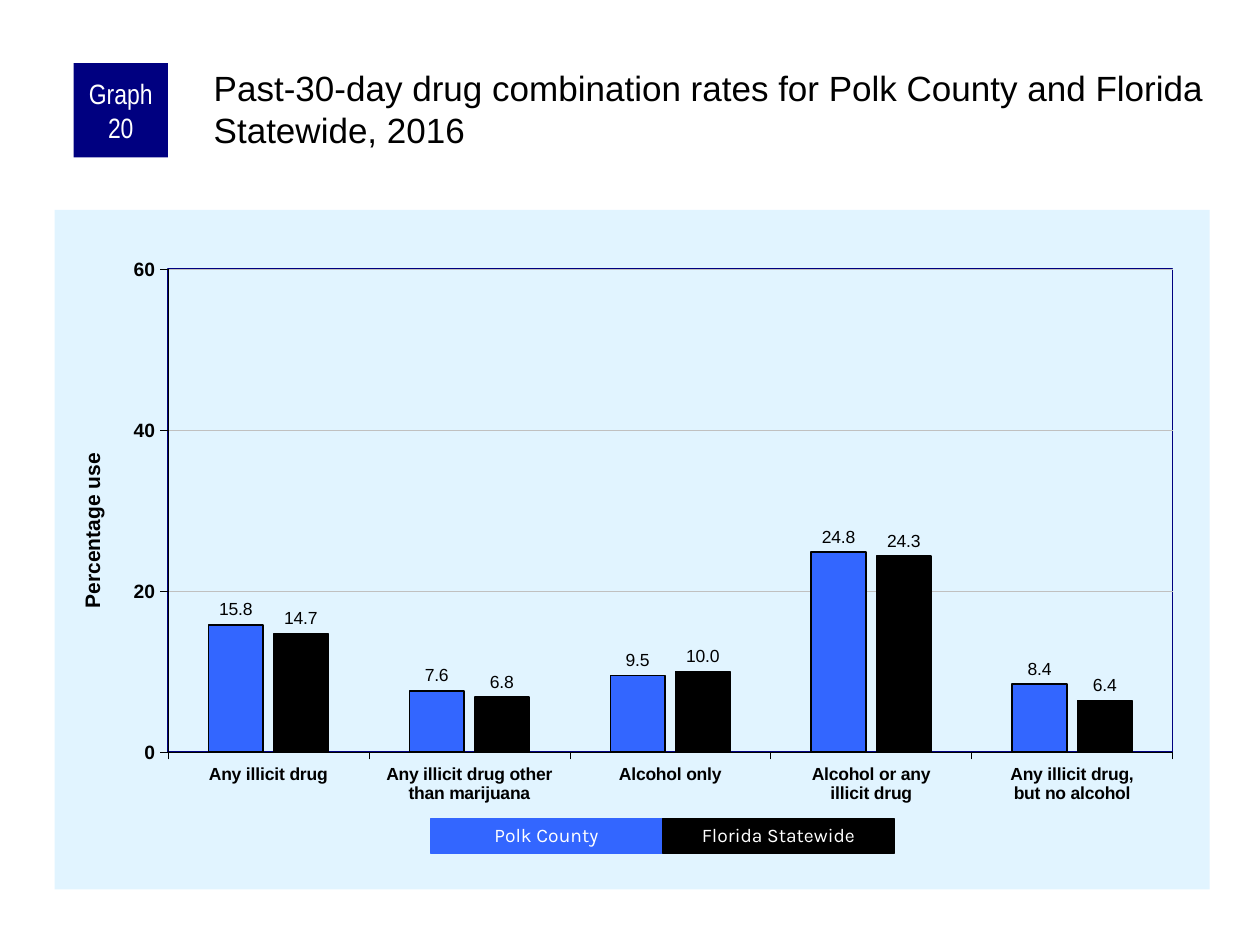
from dataclasses import dataclass

from lxml.etree import SubElement
from pptx import Presentation
from pptx.chart.data import CategoryChartData
from pptx.dml.color import RGBColor
from pptx.enum.chart import XL_CHART_TYPE as ChartType
from pptx.enum.chart import XL_LABEL_POSITION as LabelPosition
from pptx.enum.chart import XL_TICK_MARK as TickMark
from pptx.enum.shapes import MSO_SHAPE as Preset
from pptx.enum.text import MSO_ANCHOR as Anchor
from pptx.enum.text import MSO_AUTO_SIZE as AutoSize
from pptx.enum.text import PP_ALIGN as Align
from pptx.oxml import parse_xml
from pptx.oxml.ns import nsdecls, qn
from pptx.util import Inches, Pt

NAVY = RGBColor(0x00, 0x00, 0x80)
BLUE = RGBColor(0x33, 0x66, 0xFF)
BLACK = RGBColor(0x00, 0x00, 0x00)
WHITE = RGBColor(0xFF, 0xFF, 0xFF)
GREY = RGBColor(0xC0, 0xC0, 0xC0)
PALE_BLUE = RGBColor(0xE1, 0xF4, 0xFF)

COLUMNS, ROWS = 120, 90
SLIDE_WIDTH, SLIDE_HEIGHT = Inches(10), Inches(7.5)

CATEGORIES = (
    "Any illicit drug",
    "Any illicit drug other than marijuana",
    "Alcohol only",
    "Alcohol or any\nillicit drug",
    "Any illicit drug,\nbut no alcohol",
)
PLOT_LAYOUT = {"x": 0.098, "y": 0.087, "w": 0.87, "h": 0.711}


@dataclass(frozen=True)
class Box:
    """A rectangle in columns and rows of the slide grid."""

    column: float
    row: float
    columns: float
    rows: float

    def place(self) -> tuple[int, int, int, int]:
        width, height = SLIDE_WIDTH / COLUMNS, SLIDE_HEIGHT / ROWS
        return (round(self.column * width), round(self.row * height),
                round(self.columns * width), round(self.rows * height))


@dataclass(frozen=True)
class Region:
    name: str
    values: tuple[float, ...]
    color: RGBColor


REGIONS = (
    Region("Polk County", (15.8, 7.6, 9.5, 24.8, 8.4), BLUE),
    Region("Florida Statewide", (14.7, 6.8, 10.0, 24.3, 6.4), BLACK),
)


def set_values(target, values: dict) -> None:
    for name, value in values.items():
        setattr(target, name, value)


def set_font(font, name: str, size: float, color: RGBColor, bold: bool = False) -> None:
    set_values(font, {"name": name, "size": Pt(size), "bold": bold})
    font.color.rgb = color


def set_line(line, color: RGBColor, width: float) -> None:
    line.color.rgb = color
    line.width = Pt(width)


def add_rectangle(slide, box: Box, color: RGBColor):
    shape = slide.shapes.add_shape(Preset.RECTANGLE, *box.place())
    shape.shadow.inherit = False
    shape.fill.solid()
    shape.fill.fore_color.rgb = color
    shape.line.fill.background()
    return shape


def write_text(shape, text: str, font: tuple, frame: dict, paragraph_format: dict) -> None:
    set_values(shape.text_frame, {"word_wrap": True} | frame)
    paragraph = shape.text_frame.paragraphs[0]
    set_values(paragraph, paragraph_format)
    run = paragraph.add_run()
    run.text = text
    set_font(run.font, *font)


def frame_plot(chart) -> None:
    """Fix the inner plot area, outline it and fill the chart background."""
    chart_space = chart.element
    plot_area = chart_space.find(".//" + qn("c:plotArea"))
    for layout in plot_area.findall(qn("c:layout")):
        plot_area.remove(layout)
    layout = parse_xml(f"<c:layout {nsdecls('c')}/>")
    manual = SubElement(layout, qn("c:manualLayout"))
    settings = {"layoutTarget": "inner", "xMode": "edge", "yMode": "edge"} | PLOT_LAYOUT
    for name, value in settings.items():
        SubElement(manual, qn(f"c:{name}")).set("val", str(value))
    plot_area.insert(0, layout)
    plot_area.append(parse_xml(
        f"<c:spPr {nsdecls('c', 'a')}><a:noFill/><a:ln w=\"{Pt(1)}\"><a:solidFill>"
        f"<a:srgbClr val=\"{NAVY}\"/></a:solidFill></a:ln></c:spPr>"))
    chart_space.find(qn("c:chart")).addnext(parse_xml(
        f"<c:spPr {nsdecls('c', 'a')}><a:solidFill><a:srgbClr val=\"{PALE_BLUE}\"/>"
        "</a:solidFill><a:ln><a:noFill/></a:ln></c:spPr>"))


def style_axis(axis, size: float) -> None:
    set_values(axis, {"major_tick_mark": TickMark.OUTSIDE, "minor_tick_mark": TickMark.NONE})
    set_font(axis.tick_labels.font, "Arial", size, BLACK, bold=True)
    set_line(axis.format.line, BLACK, 0.25)


def add_rates_chart(slide, box: Box) -> None:
    data = CategoryChartData(number_format="0.0")
    data.categories = CATEGORIES
    for region in REGIONS:
        data.add_series(region.name, region.values)
    chart = slide.shapes.add_chart(ChartType.COLUMN_CLUSTERED, *box.place(), data).chart
    set_values(chart, {"has_legend": False, "has_title": False})
    set_font(chart.font, "Arial", 11.5, BLACK)

    plot = chart.plots[0]
    set_values(plot, {"gap_width": 150, "overlap": -20, "vary_by_categories": False})
    for series, region in zip(plot.series, REGIONS):
        series.format.fill.solid()
        series.format.fill.fore_color.rgb = region.color
        set_line(series.format.line, BLACK, 1)
        labels = series.data_labels
        set_values(labels, {"show_value": True, "number_format": "0.0",
                            "number_format_is_linked": False,
                            "position": LabelPosition.OUTSIDE_END})
        set_font(labels.font, "Arial", 10, BLACK)

    style_axis(chart.category_axis, 10)
    value_axis = chart.value_axis
    style_axis(value_axis, 11)
    set_values(value_axis, {"minimum_scale": 0, "maximum_scale": 60, "major_unit": 20,
                            "has_major_gridlines": True})
    set_line(value_axis.major_gridlines.format.line, GREY, 0.25)
    set_values(value_axis.tick_labels, {"number_format": "0", "number_format_is_linked": False})
    title = value_axis.axis_title.text_frame
    title.text = "Percentage use"
    set_font(title.paragraphs[0].runs[0].font, "Arial", 12, BLACK, bold=True)
    frame_plot(chart)


def add_legend(slide, first: Box) -> None:
    for index, region in enumerate(REGIONS):
        box = Box(first.column + index * first.columns, first.row, first.columns, first.rows)
        key = add_rectangle(slide, box, region.color)
        set_line(key.line, region.color, 0.75)
        write_text(key, region.name, ("Karla", 11, WHITE),
                   {"auto_size": AutoSize.SHAPE_TO_FIT_TEXT, "vertical_anchor": Anchor.MIDDLE},
                   {"alignment": Align.CENTER, "line_spacing": 0.9})


def main() -> None:
    presentation = Presentation()
    set_values(presentation, {"slide_width": SLIDE_WIDTH, "slide_height": SLIDE_HEIGHT})
    slide = presentation.slides.add_slide(presentation.slide_layouts[6])

    add_rates_chart(slide, Box(5.2, 20, 110, 64.7))
    badge = add_rectangle(slide, Box(7, 6, 9, 9), NAVY)
    write_text(badge, "Graph 20", ("Arial Narrow", 16, WHITE),
               {"vertical_anchor": Anchor.MIDDLE, "margin_left": Inches(0.05),
                "margin_right": Inches(0.05), "margin_top": 0, "margin_bottom": 0},
               {"alignment": Align.CENTER})
    heading = slide.shapes.add_textbox(*Box(20, 6, 95, 10).place())
    write_text(heading,
               "Past-30-day drug combination rates for Polk County and Florida Statewide, 2016",
               ("Arial", 20, BLACK),
               {"margin_left": Inches(0.03), "margin_top": Inches(0.03),
                "margin_right": 0, "margin_bottom": 0},
               {"alignment": Align.LEFT})
    add_legend(slide, Box(41, 78, 22.1, 3.25))
    presentation.save("out.pptx")


if __name__ == "__main__":
    main()
